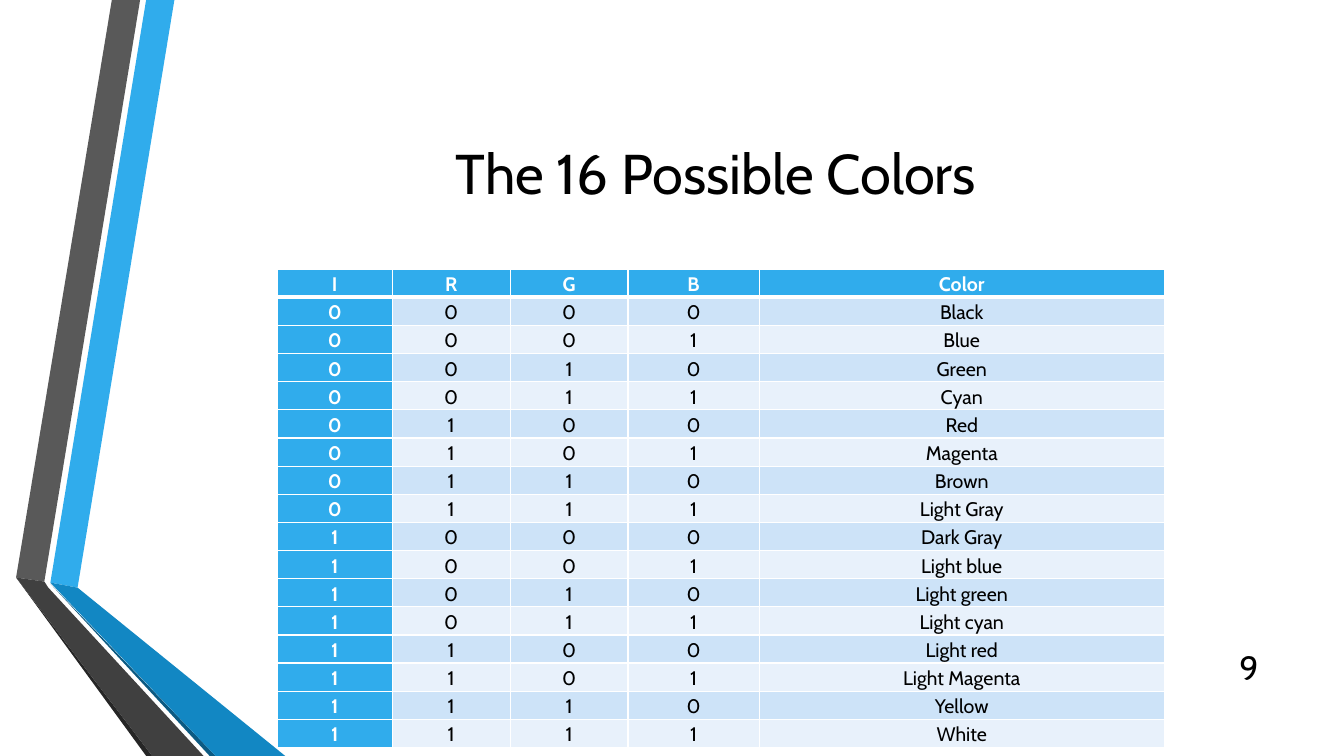
"""Build the slide that lists the 16 possible colors."""
from dataclasses import dataclass

from lxml.etree import SubElement
from pptx import Presentation
from pptx.dml.color import RGBColor
from pptx.enum.text import MSO_ANCHOR, MSO_AUTO_SIZE, PP_ALIGN
from pptx.oxml.ns import qn
from pptx.slide import Slide
from pptx.table import _Cell
from pptx.text.text import TextFrame
from pptx.util import Inches, Pt

FONT = "Cabin"
BLACK, WHITE, BLUE = "000000", "FFFFFF", "30ACEC"
BANDS = ("CDE3F8", "E8F1FB")
HEADINGS = ["I", "R", "G", "B", "Color"]
COLOR_NAMES = [
    "Black", "Blue", "Green", "Cyan", "Red", "Magenta", "Brown", "Light Gray",
    "Dark Gray", "Light blue", "Light green", "Light cyan", "Light red",
    "Light Magenta", "Yellow", "White",
]
COL_WIDTHS = [1.14, 1.17, 1.17, 1.3, 4.02]
TABLE_LEFT, TABLE_TOP, TABLE_HEIGHT = 2.75, 2.67, 4.75


@dataclass(frozen=True)
class Ribbon:
    """One filled face of the folded ribbons, with corners in inches."""

    color: str
    points: tuple[tuple[float, float], ...]


RIBBONS = [
    Ribbon(BLUE, ((0.5, 5.78), (0.77, 5.83), (1.73, 0), (1.45, 0))),
    Ribbon("595959", ((1.39, 0), (1.11, 0), (0.16, 5.73), (0.44, 5.77))),
    Ribbon("262626", ((0.16, 5.73), (1.45, 7.5), (1.51, 7.5))),
    Ribbon("0C5A82", ((0.5, 5.79), (2.08, 7.5), (2.14, 7.5))),
    Ribbon("1287C3", ((0.5, 5.78), (2.14, 7.5), (2.83, 7.5), (0.77, 5.83))),
    Ribbon("404040", ((2.02, 7.5), (0.48, 5.83), (0.44, 5.77), (0.16, 5.73), (1.51, 7.5))),
]


def rgb(color: str) -> RGBColor:
    """Turn a hex string into a color."""
    return RGBColor.from_string(color)


def write(tf: TextFrame, text: str, *, size: float, color: str = BLACK, bold: bool = False,
          align: PP_ALIGN = PP_ALIGN.CENTER, spacing: float = 1.0) -> None:
    """Put one formatted paragraph into a text frame."""
    p = tf.paragraphs[0]
    p.alignment = align
    p.line_spacing = spacing
    r = p.add_run()
    r.text = text
    r.font.name = FONT
    r.font.size = Pt(size)
    r.font.bold = bold
    r.font.color.rgb = rgb(color)


def add_ribbon(s: Slide, ribbon: Ribbon) -> None:
    """Draw one ribbon face."""
    start, *rest = [(Inches(x), Inches(y)) for x, y in ribbon.points]
    builder = s.shapes.build_freeform(*start)
    builder.add_line_segments(rest, close=True)
    sp = builder.convert_to_shape()
    sp.shadow.inherit = False
    sp.fill.solid()
    sp.fill.fore_color.rgb = rgb(ribbon.color)
    sp.line.fill.background()


def set_borders(cell: _Cell, *, top: float, bottom: float) -> None:
    """Give a cell white borders, with top and bottom widths in points."""
    tc_pr = cell._tc.get_or_add_tcPr()
    for side, width in (("L", 1), ("R", 1), ("T", top), ("B", bottom)):
        ln = SubElement(tc_pr, qn(f"a:ln{side}"), w=str(Pt(width)))
        fill = SubElement(ln, qn("a:solidFill"))
        SubElement(fill, qn("a:srgbClr"), val=WHITE)


def format_cell(cell: _Cell, text: str, row: int, col: int) -> None:
    """Fill in one table cell according to its row and column."""
    strong = row == 0 or col == 0
    set_borders(cell, top=3 if row == 1 else 1, bottom=3 if row == 0 else 1)
    cell.fill.solid()
    cell.fill.fore_color.rgb = rgb(BLUE if strong else BANDS[(row - 1) % 2])
    cell.margin_left = cell.margin_right = Inches(0.1)
    cell.margin_top = cell.margin_bottom = 0
    write(cell.text_frame, text, size=14, color=WHITE if strong else BLACK,
          bold=strong, spacing=1.15)


def add_color_table(s: Slide) -> None:
    """Add the table that pairs each four-bit value with its color name."""
    rows = [HEADINGS] + [[*f"{i:04b}", name] for i, name in enumerate(COLOR_NAMES)]
    table = s.shapes.add_table(
        len(rows), len(HEADINGS), Inches(TABLE_LEFT), Inches(TABLE_TOP),
        Inches(sum(COL_WIDTHS)), Inches(TABLE_HEIGHT)).table
    table.first_col = True
    for column, width in zip(table.columns, COL_WIDTHS):
        column.width = Inches(width)
    for i, values in enumerate(rows):
        table.rows[i].height = Inches(TABLE_HEIGHT / len(rows))
        for j, text in enumerate(values):
            format_cell(table.cell(i, j), text, i, j)


def add_title(s: Slide, text: str) -> None:
    """Place and format the title."""
    sp = s.shapes.title
    sp.left, sp.top, sp.width, sp.height = map(Inches, (1.62, 0.75, 10.96, 1.92))
    tf = sp.text_frame
    tf.auto_size = MSO_AUTO_SIZE.NONE
    tf.vertical_anchor = MSO_ANCHOR.MIDDLE
    write(tf, text, size=40)


def add_page_number(s: Slide, text: str) -> None:
    """Add the page number at the lower right."""
    tf = s.shapes.add_textbox(*map(Inches, (11.98, 6.42, 0.6, 0.4))).text_frame
    tf.word_wrap = True
    tf.vertical_anchor = MSO_ANCHOR.MIDDLE
    write(tf, text, size=24, align=PP_ALIGN.RIGHT)


def main() -> None:
    """Build and save the presentation."""
    prs = Presentation()
    prs.slide_width, prs.slide_height = Inches(13.33), Inches(7.5)
    s = prs.slides.add_slide(prs.slide_layouts[5])
    for ribbon in RIBBONS:
        add_ribbon(s, ribbon)
    add_title(s, "The 16 Possible Colors")
    add_page_number(s, "9")
    add_color_table(s)
    prs.save("out.pptx")


if __name__ == "__main__":
    main()
